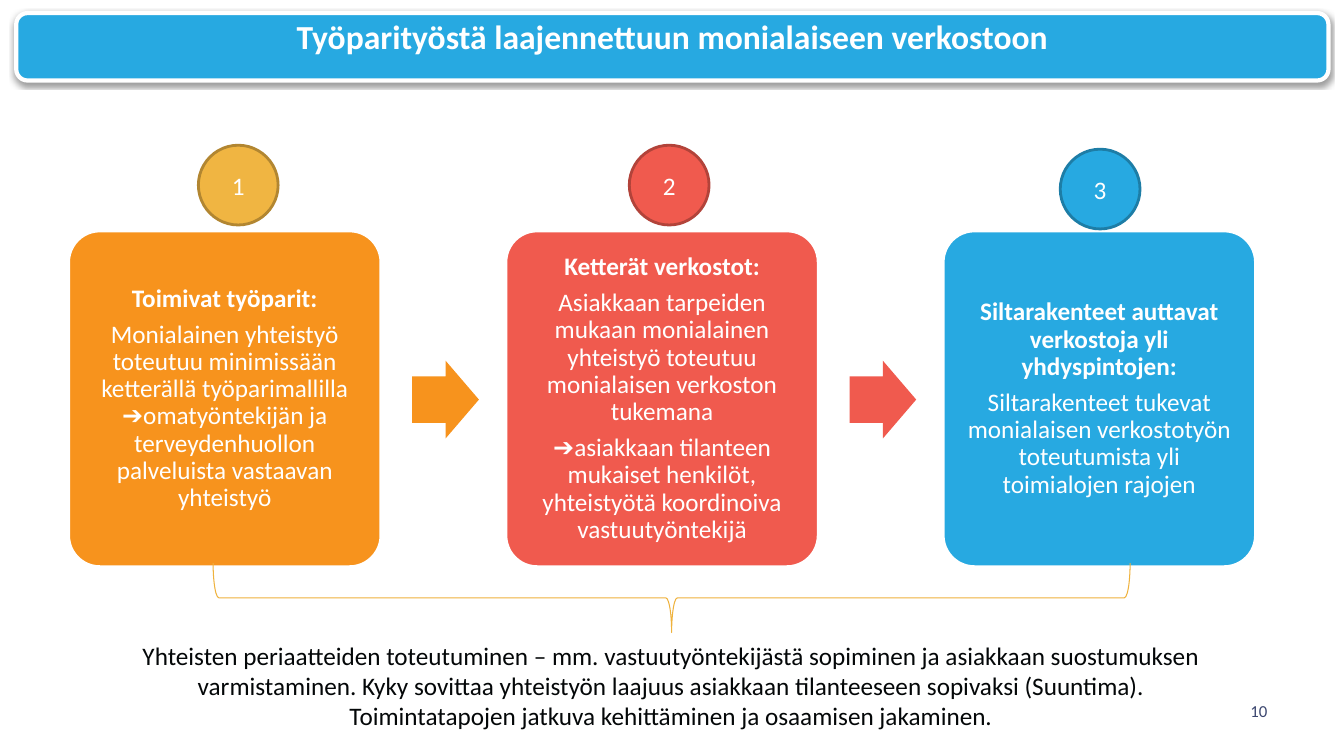
"""Build the slide on growing from work pairs to a wider network."""
import pptx
import pptx.util
import pptx.dml.color
import pptx.enum.shapes
import pptx.enum.text
import pptx.oxml

Cm, Pt = pptx.util.Cm, pptx.util.Pt
KIND = pptx.enum.shapes.MSO_SHAPE
ANCHOR = pptx.enum.text.MSO_ANCHOR
CENTER = pptx.enum.text.PP_ALIGN.CENTER
WHITE, ORANGE, RED, BLUE = "FFFFFF", "F7931D", "F05A4E", "27A9E1"

STEPS = [
    (ORANGE, "F0B542", "B28631", 3.66, [
        "Toimivat työparit:",
        "Monialainen yhteistyö toteutuu minimissään ketterällä työparimallilla "
        "➔omatyöntekijän ja terveydenhuollon palveluista vastaavan yhteistyö"]),
    (RED, RED, "B2433A", 3.66, [
        "Ketterät verkostot:",
        "Asiakkaan tarpeiden mukaan monialainen yhteistyö toteutuu "
        "monialaisen verkoston tukemana",
        "➔asiakkaan tilanteen mukaiset henkilöt, yhteistyötä koordinoiva "
        "vastuutyöntekijä"]),
    (BLUE, BLUE, "1D7DA6", 3.76, [
        "Siltarakenteet auttavat verkostoja yli yhdyspintojen:",
        "Siltarakenteet tukevat monialaisen verkostotyön toteutumista yli "
        "toimialojen rajojen"]),
]
NOTES = [
    "Yhteisten periaatteiden toteutuminen – mm. vastuutyöntekijästä sopiminen "
    "ja asiakkaan suostumuksen varmistaminen. Kyky sovittaa yhteistyön laajuus "
    "asiakkaan tilanteeseen sopivaksi (Suuntima).",
    "Toimintatapojen jatkuva kehittäminen ja osaamisen jakaminen.",
]
SHADOW = (
    '<a:effectLst xmlns:a="http://schemas.openxmlformats.org/drawingml/2006/main">'
    '<a:outerShdw blurRad="40000" dist="20000" dir="5400000" rotWithShape="0">'
    '<a:srgbClr val="000000"><a:alpha val="38000"/></a:srgbClr>'
    '</a:outerShdw></a:effectLst>')


def color(code):
    """Turn a hex string into a colour."""
    return pptx.dml.color.RGBColor.from_string(code)


def apply(item, values):
    """Set each named value on the item."""
    for name, value in values.items():
        setattr(item, name, value)


def write(shape, lines, size=18, ink=WHITE, bold=False, head=False,
          inset=None, anchor=ANCHOR.TOP, **layout):
    """Fill a shape with centred lines, the first bold if head is set."""
    frame = shape.text_frame
    apply(frame, {"text": "\n".join(lines), "word_wrap": True,
                  "auto_size": pptx.enum.text.MSO_AUTO_SIZE.NONE,
                  "vertical_anchor": anchor})
    if inset is not None:
        sides = ("left", "top", "right", "bottom")
        apply(frame, {f"margin_{side}": Cm(inset) for side in sides})
    for index, line in enumerate(frame.paragraphs):
        apply(line, {"alignment": CENTER, **layout})
        apply(line.font, {"name": "Calibri", "size": Pt(size),
                          "bold": bold or (head and index == 0)})
        line.font.color.rgb = color(ink)


def draw(slide, kind, box, fill=None, edge=None, width=2):
    """Add a preset shape with a plain fill and line."""
    shape = slide.shapes.add_shape(kind, *map(Cm, box))
    shape.shadow.inherit = False
    if fill:
        shape.fill.solid()
        shape.fill.fore_color.rgb = color(fill)
    else:
        shape.fill.background()
    if edge:
        shape.line.color.rgb = color(edge)
        shape.line.width = Pt(width)
    else:
        shape.line.fill.background()
    return shape


def label(slide, box, lines, **values):
    """Add a text box with the given lines."""
    write(slide.shapes.add_textbox(*map(Cm, box)), lines, **values)


def banner(slide, text):
    """Draw the top bar and set the title on it."""
    bar = draw(slide, KIND.ROUNDED_RECTANGLE, (0.41, 0.33, 33.07, 1.7),
               BLUE, WHITE, 3)
    props = bar.element.spPr
    props.remove(props[-1])
    props.append(pptx.oxml.parse_xml(SHADOW))
    title = slide.shapes.title
    slide.shapes.element.append(title.element)
    apply(title, {"left": Cm(0.49), "top": Cm(0.41),
                  "width": Cm(32.91), "height": Cm(1.54)})
    write(title, [text], size=24, bold=True, inset=0)


def step(slide, index, fill, disc, edge, top, lines):
    """Draw one numbered card and the arrow to the next card."""
    shift = 11.02 * index
    card = draw(slide, KIND.ROUNDED_RECTANGLE,
                (1.73 + shift, 5.82, 7.87, 8.46), fill, WHITE)
    card.adjustments[0] = 0.1
    write(card, lines, head=True, inset=0.18, anchor=ANCHOR.MIDDLE,
          line_spacing=0.9, space_after=Pt(6.3))
    if index < len(STEPS) - 1:
        arrow = draw(slide, KIND.RIGHT_ARROW,
                     (10.39 + shift, 9.09, 1.68, 1.96), fill)
        arrow.adjustments[0] = 0.6
    badge = draw(slide, KIND.OVAL, (5 + 10.86 * index, top, 2.01, 2.01),
                 disc, edge)
    write(badge, [str(index + 1)], anchor=ANCHOR.MIDDLE)


def main():
    """Build and save the slide."""
    deck = pptx.Presentation()
    apply(deck, {"slide_width": Cm(33.87), "slide_height": Cm(19.05)})
    slide = deck.slides.add_slide(deck.slide_layouts[5])
    banner(slide, "Työparityöstä laajennettuun monialaiseen verkostoon")
    for index, values in enumerate(STEPS):
        step(slide, index, *values)
    brace = draw(slide, KIND.RIGHT_BRACE, (16.05, 3.51, 1.75, 23.11),
                 edge="EFB23C", width=0.75)
    brace.rotation = 90
    label(slide, (2.84, 16, 28.14, 2.57), NOTES, ink="040708")
    label(slide, (30.71, 17.4, 2.03, 1.02), ["10"], size=12, ink="3B466F",
          anchor=ANCHOR.MIDDLE)
    deck.save("out.pptx")


if __name__ == "__main__":
    main()
